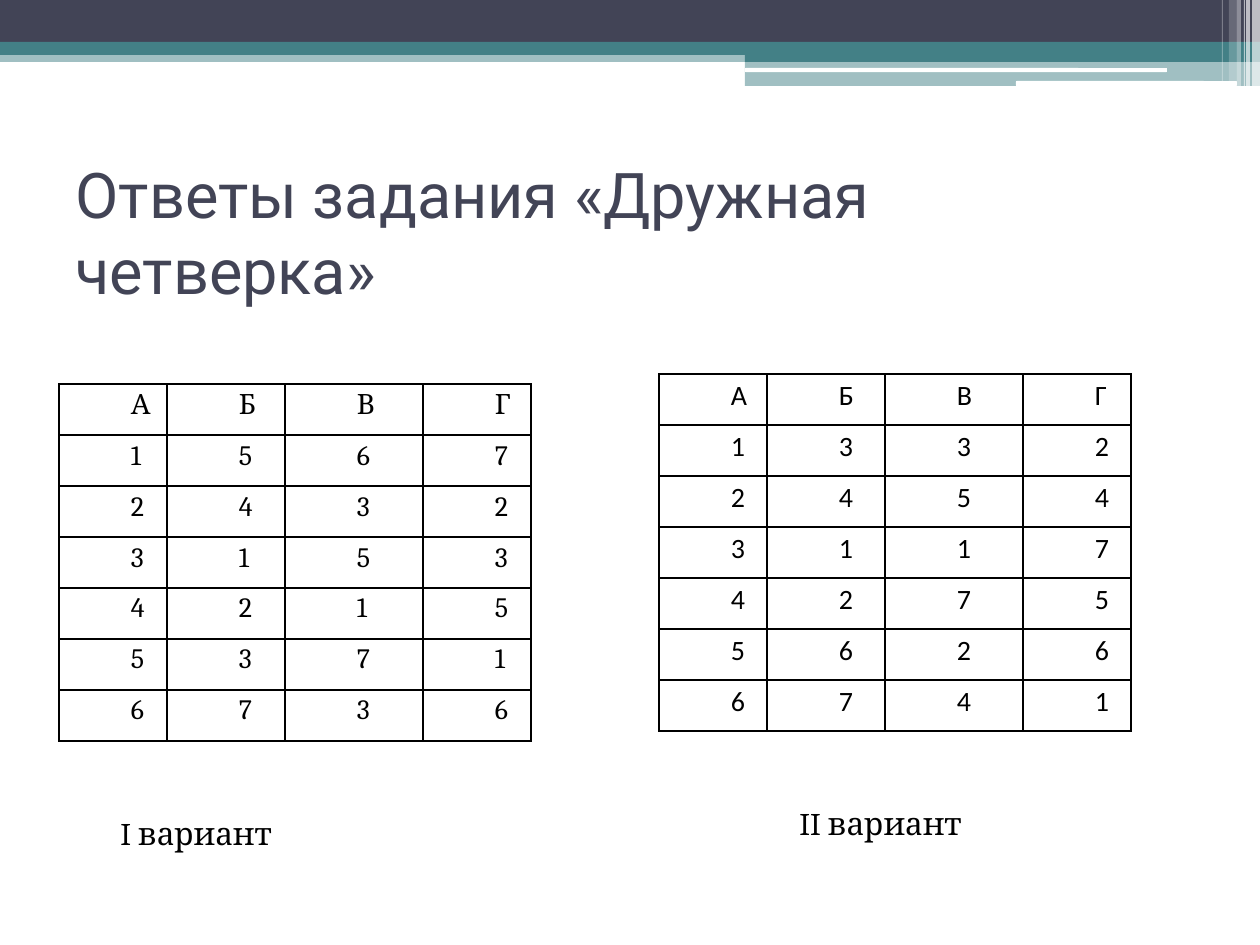
from lxml import etree
from pptx import Presentation
from pptx.dml.color import RGBColor
from pptx.enum import shapes, text
from pptx.oxml.ns import qn
from pptx.util import Pt

NAVY = RGBColor(0x42, 0x44, 0x56)
TEAL = RGBColor(0x43, 0x80, 0x86)
WHITE = RGBColor(0xFF, 0xFF, 0xFF)
BLACK = RGBColor(0, 0, 0)
RECT = shapes.MSO_SHAPE.RECTANGLE
ROUND = shapes.MSO_SHAPE.ROUNDED_RECTANGLE

TITLE = "Ответы задания «Дружная четверка»"
HEADER = "АБВГ"
# position, font, alignment, answer rows
TABLES = [
    ((59, 384), "Cambria", text.PP_ALIGN.LEFT,
     ["1567", "2432", "3153", "4215", "5371", "6736"]),
    ((659, 374), "Calibri", text.PP_ALIGN.JUSTIFY,
     ["1332", "2454", "3117", "4275", "5626", "6741"]),
]
COLUMNS = [108, 118, 138, 108]
ROW_HEIGHT = 51
LABELS = [("I вариант", (108, 808, 403, 50)), ("II вариант", (787, 798, 295, 50))]

# shape, left, top, width, height, colour, opacity in percent
BANNER = [
    (RECT, 0, 50, 1260, 12, TEAL, 50),
    (RECT, 0, 0, 1260, 43, NAVY, 100),
    (RECT, 0, 42, 1260, 13, TEAL, 100),
    (RECT, 745, 49, 515, 13, TEAL, 100),
    (RECT, 745, 62, 515, 24, TEAL, 50),
    (ROUND, 745, 68, 422, 4, WHITE, 100),
    (ROUND, 1016, 81, 221, 5, WHITE, 100),
]
# left, width, height, opacity of the white stripes at the right end
STRIPES = [(1252, 8, 86, 65), (1246, 4, 86, 65), (1244, 1, 86, 60),
           (1237, 4, 86, 40), (1229, 8, 81, 20), (1222, 1, 81, 30)]


def px(n):
    return round(n * 914400 / 126)


def add_bar(slide, kind, left, top, width, height, color, opacity):
    sp = slide.shapes.add_shape(kind, px(left), px(top), px(width), px(height))
    sp.shadow.inherit = False
    sp.line.fill.background()
    sp.fill.solid()
    sp.fill.fore_color.rgb = color
    if opacity < 100:
        clr = sp._element.spPr.find(".//" + qn("a:srgbClr"))
        etree.SubElement(clr, qn("a:alpha"), val=str(opacity * 1000))


def style(p, font, size, color, align=text.PP_ALIGN.LEFT):
    p.alignment = align
    p.font.name, p.font.size, p.font.color.rgb = font, Pt(size), color


def add_borders(cell):
    tcPr = cell._tc.get_or_add_tcPr()
    for i, side in enumerate("LRTB"):
        ln = etree.Element(qn("a:ln" + side), w=str(Pt(1)))
        fill = etree.SubElement(ln, qn("a:solidFill"))
        etree.SubElement(fill, qn("a:srgbClr"), val=str(BLACK))
        tcPr.insert(i, ln)


def add_answers(slide, position, font, align, answers):
    rows = [HEADER, *answers]
    left, top = position
    table = slide.shapes.add_table(
        len(rows), len(COLUMNS), px(left), px(top),
        px(sum(COLUMNS)), px(ROW_HEIGHT * len(rows))).table
    table.first_row = table.horz_banding = False
    for column, width in zip(table.columns, COLUMNS):
        column.width = px(width)
    for row, values in zip(table.rows, rows):
        row.height = px(ROW_HEIGHT)
        for cell, value in zip(row.cells, values):
            cell.text = value
            cell.fill.background()
            cell.margin_left = cell.margin_right = px(9)
            cell.margin_top = cell.margin_bottom = 0
            p = cell.text_frame.paragraphs[0]
            style(p, font, 16, BLACK, align)
            p.line_spacing = 1.15
            p._p.get_or_add_pPr().set("marL", str(px(63)))
            add_borders(cell)


def main():
    prs = Presentation()
    prs.slide_width, prs.slide_height = px(1260), px(945)
    slide = prs.slides.add_slide(prs.slide_layouts[5])

    for bar in BANNER:
        add_bar(slide, *bar)
    for left, width, height, opacity in STRIPES:
        add_bar(slide, RECT, left, 0, width, height, WHITE, opacity)

    title = slide.shapes.title
    title.left, title.top, title.width, title.height = map(px, (63, 158, 1134, 147))
    tf = title.text_frame
    tf.text = TITLE
    tf.vertical_anchor = text.MSO_ANCHOR.MIDDLE
    style(tf.paragraphs[0], "Roboto", 36, NAVY)

    for answers in TABLES:
        add_answers(slide, *answers)
    for label, box in LABELS:
        tf = slide.shapes.add_textbox(*map(px, box)).text_frame
        tf.word_wrap = True
        tf.text = label
        style(tf.paragraphs[0], "Cambria", 18, BLACK)

    prs.save("out.pptx")


if __name__ == "__main__":
    main()
